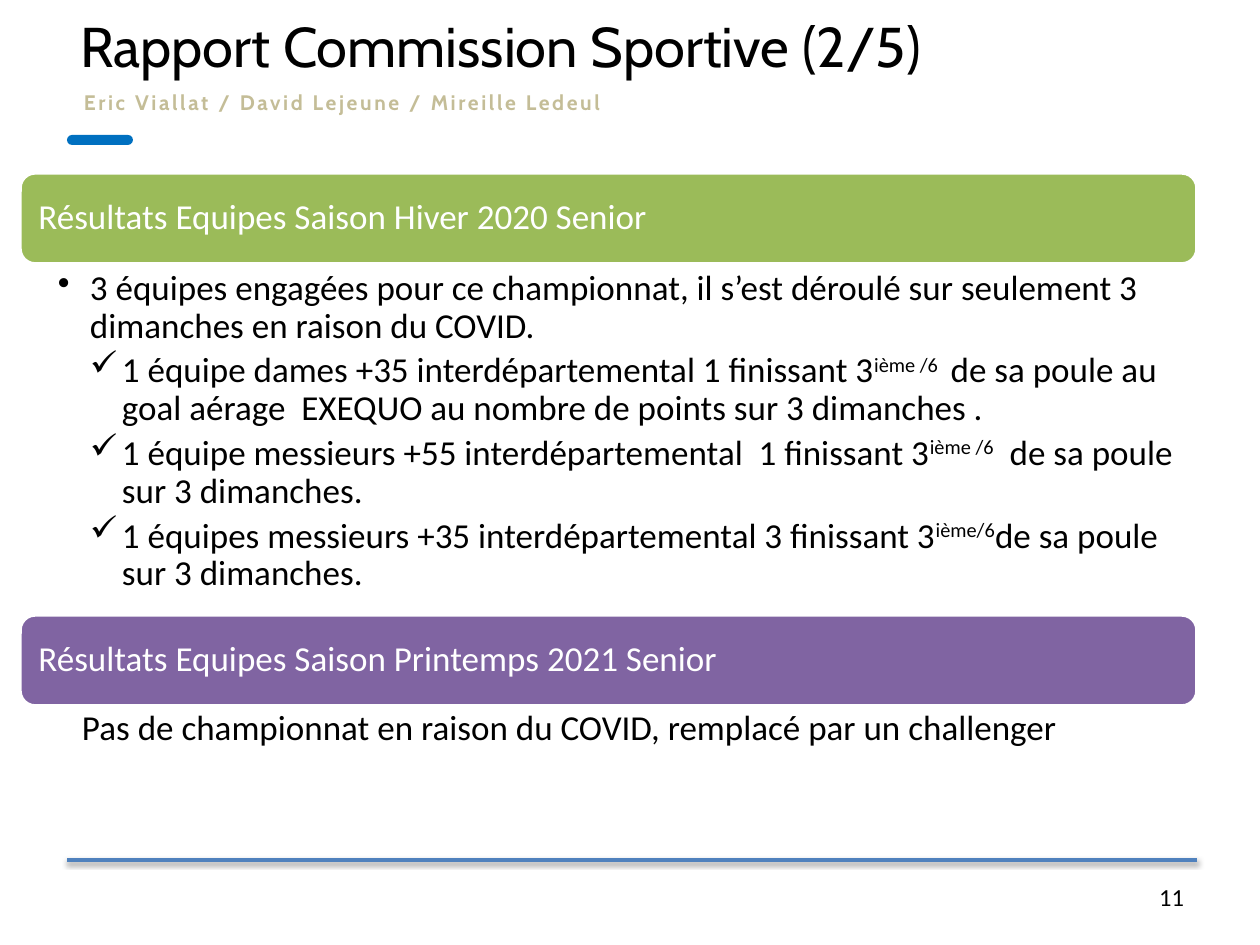
from dataclasses import dataclass
from typing import Optional

from lxml.etree import SubElement
from pptx import Presentation
from pptx.dml.color import RGBColor
from pptx.enum.shapes import MSO_CONNECTOR, MSO_SHAPE
from pptx.enum.text import MSO_ANCHOR, PP_ALIGN
from pptx.oxml.ns import qn
from pptx.util import Emu, Pt

EMU_PER_PX = 914400 / 126

BLACK = RGBColor(0x00, 0x00, 0x00)
WHITE = RGBColor(0xFF, 0xFF, 0xFF)
GREEN = RGBColor(0x9B, 0xBB, 0x59)
PURPLE = RGBColor(0x80, 0x64, 0xA2)
ACCENT_BLUE = RGBColor(0x00, 0x70, 0xC0)
RULE_BLUE = RGBColor(0x4F, 0x81, 0xBD)
TAN = RGBColor(0xC4, 0xBD, 0x97)

SECTION_LEFT, SECTION_WIDTH, HEADER_HEIGHT = 20, 1177, 91
HEADER_INSETS = (14, 10, 14, 10)
BODY_INSETS = (38, 4, 20, 4)
DEFAULT_INSETS = (13, 6, 13, 6)
INDENT = 32


@dataclass
class Item:
    segments: tuple[str, ...]  # every second segment is superscript
    margin: int
    hanging: int = 0
    bullet: Optional[str] = None


@dataclass
class Section:
    heading: str
    color: RGBColor
    top: int
    body_top: int
    body_height: int
    items: list[Item]


SECTIONS = [
    Section("Résultats Equipes Saison Hiver 2020 Senior", GREEN, 173, 266, 349, [
        Item(("3 équipes engagées pour ce championnat, il s’est déroulé sur "
              "seulement 3 dimanches en raison du COVID.",), INDENT, INDENT, "•"),
        Item(("1 équipe dames +35 interdépartemental 1 finissant 3", "ième /6 ",
              " de sa poule au goal aérage  EXEQUO au nombre de points sur 3 dimanches ."),
             2 * INDENT, INDENT, "✓"),
        Item(("1 équipe messieurs +55 interdépartemental  1 finissant 3", "ième /6",
              "  de sa poule sur 3 dimanches."), 2 * INDENT, INDENT, "✓"),
        Item(("1 équipes messieurs +35 interdépartemental 3 finissant 3", "ième/6",
              "de sa poule sur 3 dimanches."), 2 * INDENT, INDENT, "✓"),
    ]),
    Section("Résultats Equipes Saison Printemps 2021 Senior", PURPLE, 615, 706, 79, [
        Item(("Pas de championnat en raison du COVID, remplacé par un challenger",), 24),
    ]),
]


def px(length: int) -> Emu:
    return Emu(round(length * EMU_PER_PX))


def set_frame(frame, insets=DEFAULT_INSETS, anchor=MSO_ANCHOR.TOP) -> None:
    frame.word_wrap = True
    frame.vertical_anchor = anchor
    (frame.margin_left, frame.margin_top,
     frame.margin_right, frame.margin_bottom) = map(px, insets)


def add_frame(slide, left: int, top: int, width: int, height: int, **layout):
    frame = slide.shapes.add_textbox(px(left), px(top), px(width), px(height)).text_frame
    set_frame(frame, **layout)
    return frame


def write(paragraph, text: str, *, size=20, font="Calibri", color=BLACK, bold=False,
          align=PP_ALIGN.LEFT, tracking=0, superscript=False) -> None:
    paragraph.alignment = align
    run = paragraph.add_run()
    run.text = text
    run.font.size = Pt(size)
    run.font.name = font
    run.font.bold = bold
    run.font.color.rgb = color
    properties = run._r.get_or_add_rPr()
    if tracking:
        properties.set("spc", str(round(tracking * 100)))
    if superscript:
        properties.set("baseline", "30000")


def add_round_bar(slide, left: int, top: int, width: int, height: int, color: RGBColor):
    bar = slide.shapes.add_shape(MSO_SHAPE.ROUNDED_RECTANGLE,
                                 px(left), px(top), px(width), px(height))
    bar.shadow.inherit = False
    bar.fill.solid()
    bar.fill.fore_color.rgb = color
    bar.line.fill.background()
    return bar


def write_item(paragraph, item: Item) -> None:
    properties = paragraph._p.get_or_add_pPr()
    properties.set("marL", str(px(item.margin)))
    properties.set("indent", str(-px(item.hanging)))
    if item.bullet:
        SubElement(properties, qn("a:buChar"), char=item.bullet)
    paragraph.line_spacing = 0.9
    paragraph.space_after = Pt(4)
    for index, segment in enumerate(item.segments):
        write(paragraph, segment, superscript=index % 2 == 1)


def add_section(slide, section: Section) -> None:
    header = add_round_bar(slide, SECTION_LEFT, section.top, SECTION_WIDTH,
                           HEADER_HEIGHT, section.color)
    header.line.color.rgb = WHITE
    header.line.width = Pt(2)
    set_frame(header.text_frame, HEADER_INSETS, MSO_ANCHOR.MIDDLE)
    heading = header.text_frame.paragraphs[0]
    heading.line_spacing = 0.9
    write(heading, section.heading, color=WHITE)

    body = add_frame(slide, SECTION_LEFT, section.body_top, SECTION_WIDTH,
                     section.body_height, insets=BODY_INSETS)
    for index, item in enumerate(section.items):
        write_item(body.add_paragraph() if index else body.paragraphs[0], item)


def add_footer_rule(slide) -> None:
    rule = slide.shapes.add_connector(MSO_CONNECTOR.STRAIGHT,
                                      px(1197), px(860), px(67), px(860))
    rule.line.color.rgb = RULE_BLUE
    rule.line.width = Pt(2)
    effects = SubElement(rule._element.spPr, qn("a:effectLst"))
    shadow = SubElement(effects, qn("a:outerShdw"), blurRad=str(Pt(3.1)),
                        dist=str(Pt(1.6)), dir="5400000", rotWithShape="0")
    shade = SubElement(shadow, qn("a:srgbClr"), val=str(BLACK))
    SubElement(shade, qn("a:alpha"), val="38000")


def main() -> None:
    prs = Presentation()
    prs.slide_width, prs.slide_height = px(1260), px(945)
    slide = prs.slides.add_slide(prs.slide_layouts[6])

    # Accent bar and footer rule
    accent = add_round_bar(slide, 67, 135, 66, 10, ACCENT_BLUE)
    accent.adjustments[0] = 0.5
    add_footer_rule(slide)

    # Authors, title and page number
    authors = add_frame(slide, 84, 90, 1058, 26, insets=(0, 0, 0, 0))
    write(authors.paragraphs[0], "Eric Viallat / David Lejeune / Mireille Ledeul",
          size=12, font="Cabin", color=TAN, bold=True, tracking=1.5)
    title = add_frame(slide, 67, 6, 1076, 79, anchor=MSO_ANCHOR.MIDDLE)
    write(title.paragraphs[0], "Rapport Commission Sportive (2/5)", size=32, font="Cabin")
    page_number = add_frame(slide, 903, 876, 294, 50)
    write(page_number.paragraphs[0], "11", size=14, align=PP_ALIGN.RIGHT)

    # Results by season
    for section in SECTIONS:
        add_section(slide, section)

    prs.save("out.pptx")


if __name__ == "__main__":
    main()
